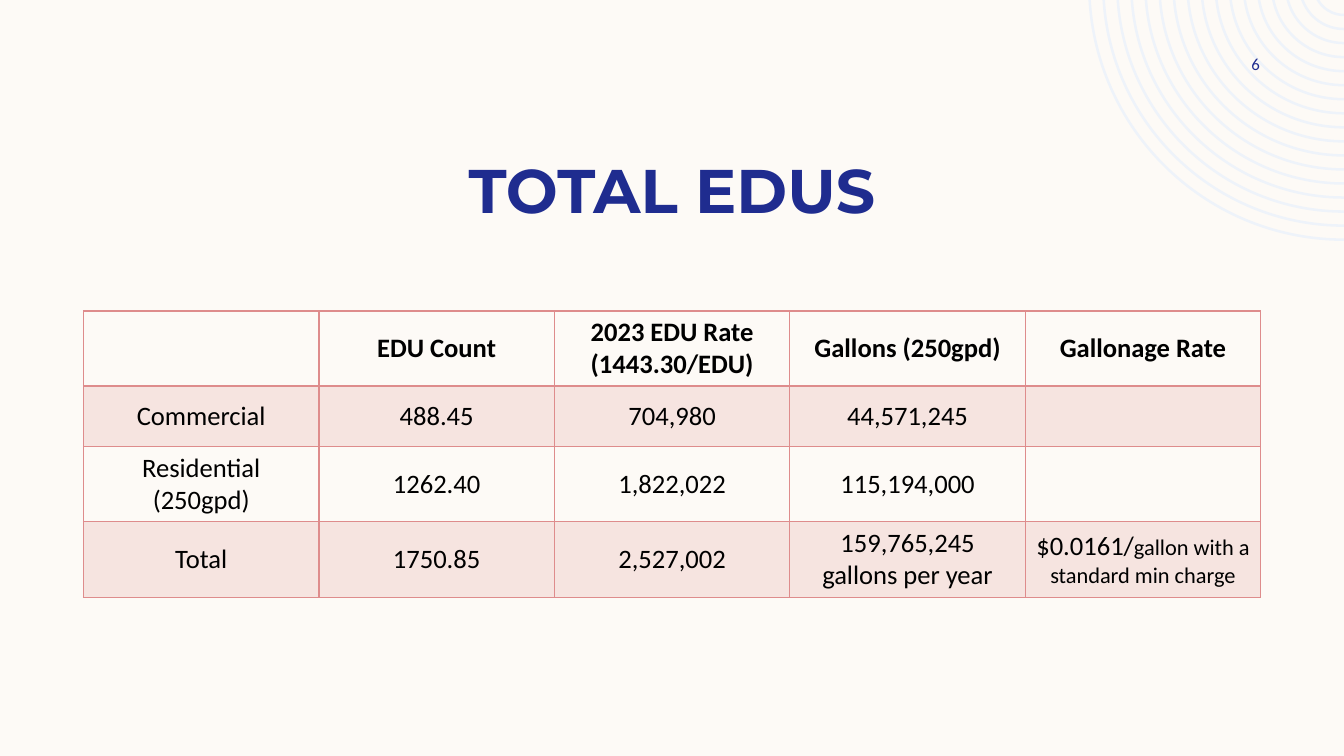
import math
from lxml import etree
from pptx import Presentation, util as u
from pptx.dml.color import RGBColor
from pptx.enum import text as t
from pptx.oxml.ns import qn

Pt = u.Pt
NAVY, ROSE = "1F2C8F", "DE8C8C"


def paint(fill, colour):
    fill.solid()
    fill.fore_color.rgb = RGBColor.from_string(colour)


def write(paragraph, words, align, **font):
    paragraph.alignment = align
    run = paragraph.add_run()
    run.text = words
    paint(run.font.fill, font.pop("colour"))
    for key, value in font.items():
        setattr(run.font, key, value)


deck = Presentation()
deck.slide_width, deck.slide_height = Pt(960), Pt(540)
slide = deck.slides.add_slide(deck.slide_layouts[6])
paint(slide.background.fill, "FDFAF6")

centre_x, centre_y = 960, -10.8
ring_count, ring_step, ring_width = 17, 10.03, 1.8
rings = None
for ring in range(ring_count):
    outer = 182.9 - ring * ring_step
    outline = []
    for radius, order in ((outer, 1), (outer - ring_width, -1)):
        sweep = math.acos(-centre_y / radius)
        sine, cosine = math.sin(sweep), math.cos(sweep)
        handle = 4 / 3 * math.tan(sweep / 4)
        arc = [(Pt(centre_x - radius * across), Pt(centre_y + radius * down))
               for across, down in ((0, 1), (handle, 1),
                                    (sine - handle * cosine, cosine + handle * sine),
                                    (sine, cosine))]
        outline += arc[::order]
    if rings is None:
        rings = slide.shapes.build_freeform(*outline[0], scale=1.0)
    else:
        rings.move_to(*outline[0])
    rings.add_line_segments(outline[1:], close=True)
ripples = rings.convert_to_shape()
paint(ripples.fill, "EEF3FA")
ripples.line.fill.background()
ripples.shadow.inherit = False

segments = list(ripples._element.iter(qn("a:lnTo")))
for ring in range(ring_count):
    for first in (ring * 7, ring * 7 + 4):
        curve = etree.Element(qn("a:cubicBezTo"))
        segments[first].addprevious(curve)
        for segment in segments[first:first + 3]:
            curve.append(segment[0])
            segment.getparent().remove(segment)

labels = [
    ("TOTAL EDUS", (60, 57.6, 840, 107.3), t.MSO_ANCHOR.BOTTOM, 7.2, t.PP_ALIGN.CENTER,
     {"size": Pt(44), "name": "Montserrat", "bold": True}),
    ("6", (822, 36, 78, 19.4), t.MSO_ANCHOR.MIDDLE, 0, t.PP_ALIGN.RIGHT,
     {"size": Pt(12), "name": "Calibri"}),
]
for words, place, anchor, right_inset, align, font in labels:
    frame = slide.shapes.add_textbox(*map(Pt, place)).text_frame
    frame.word_wrap = True
    frame.vertical_anchor = anchor
    frame.margin_right = Pt(right_inset)
    write(frame.paragraphs[0], words, align, colour=NAVY, **font)

edu_rows = [
    ["", "EDU Count", "2023 EDU Rate (1443.30/EDU)", "Gallons (250gpd)", "Gallonage Rate"],
    ["Commercial", "488.45", "704,980", "44,571,245", ""],
    ["Residential (250gpd)", "1262.40", "1,822,022", "115,194,000", ""],
    ["Total", "1750.85", "2,527,002", "159,765,245 gallons per year", "$0.0161/"],
]
row_heights = [53.6, 43, 54, 54]
column_width = 168.2
edus = slide.shapes.add_table(4, 5, Pt(59.6), Pt(222.2), Pt(5 * column_width),
                              Pt(sum(row_heights))).table
edus.first_row = edus.horz_banding = False
for column in edus.columns:
    column.width = Pt(column_width)

cell_format = {"vertical_anchor": t.MSO_ANCHOR.MIDDLE, "margin_left": Pt(7.6),
               "margin_right": Pt(7.6), "margin_top": Pt(3.8), "margin_bottom": Pt(3.8)}
cell_font = {"colour": "000000", "name": "Calibri"}
for r, values in enumerate(edu_rows):
    edus.rows[r].height = Pt(row_heights[r])
    for c, value in enumerate(values):
        cell = edus.cell(r, c)
        for key, setting in cell_format.items():
            setattr(cell, key, setting)
        if value:
            write(cell.text_frame.paragraphs[0], value, t.PP_ALIGN.CENTER,
                  size=Pt(19), bold=r == 0, **cell_font)
        properties = cell._tc.get_or_add_tcPr()
        if r % 2:
            paint(cell.fill, ROSE)
            tint = properties.find(".//" + qn("a:srgbClr"))
            etree.SubElement(tint, qn("a:alpha"), val="20000")
        else:
            cell.fill.background()
        for position, side in enumerate(("lnL", "lnR", "lnT", "lnB")):
            heavy = (r, side) in ((0, "lnB"), (1, "lnT"))
            border = etree.Element(qn("a:" + side), w=str(Pt(2 if heavy else 1)))
            stroke = etree.SubElement(border, qn("a:solidFill"))
            etree.SubElement(stroke, qn("a:srgbClr"), val=ROSE)
            properties.insert(position, border)

write(edus.cell(3, 4).text_frame.paragraphs[0], "gallon with a standard min charge",
      t.PP_ALIGN.CENTER, size=Pt(16), bold=False, **cell_font)

deck.save("out.pptx")
